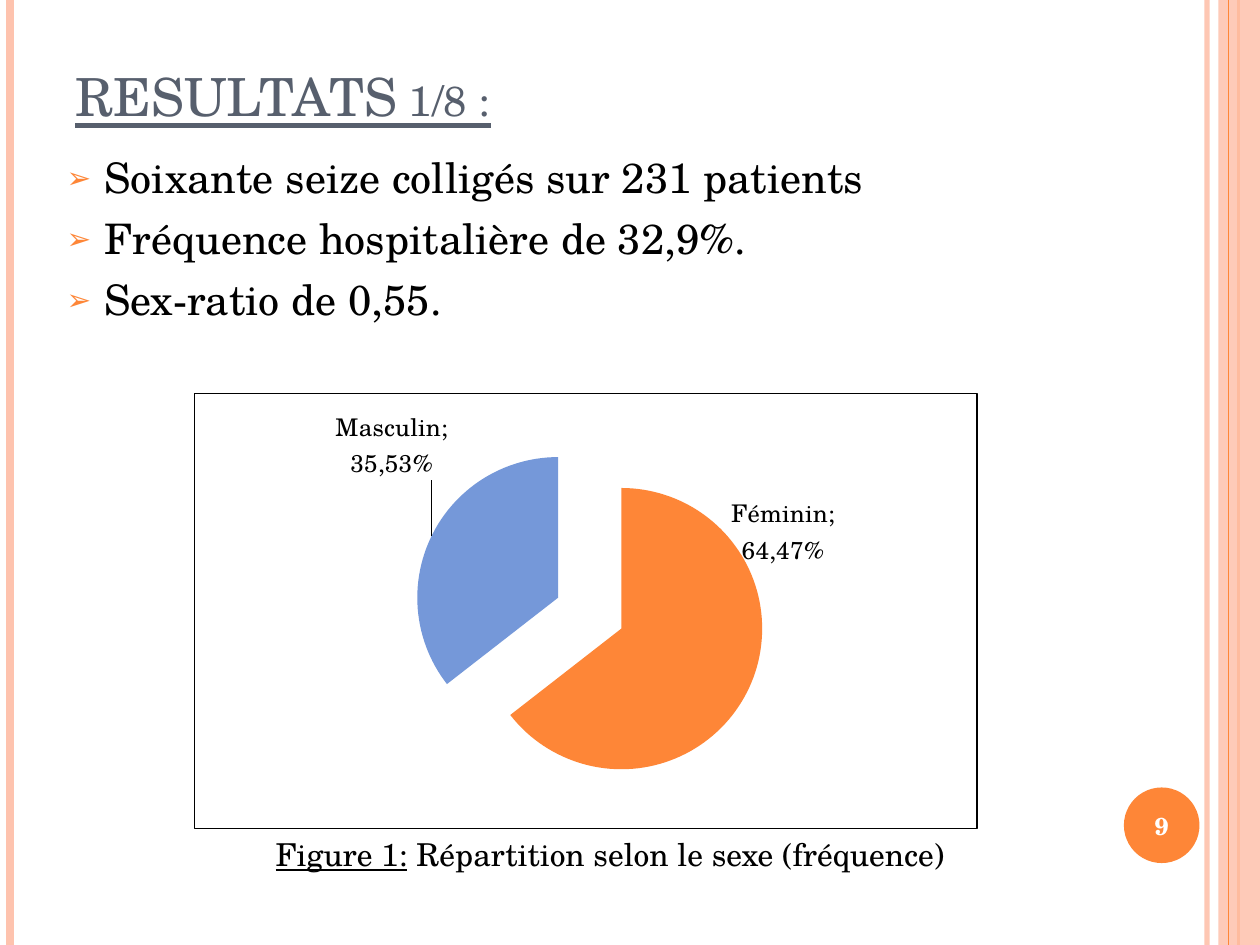
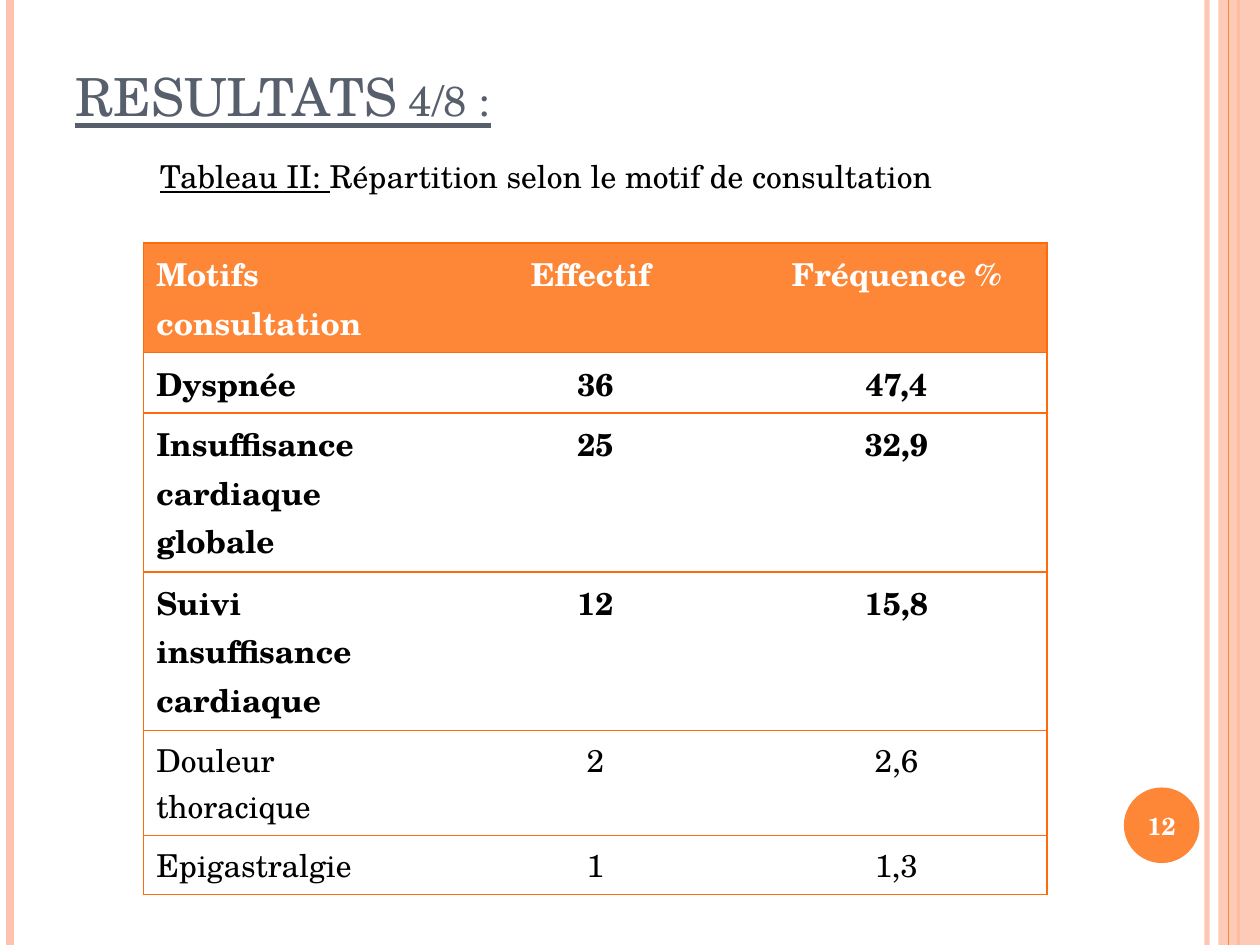
from lxml import etree
from pptx import Presentation
from pptx import util as u
from pptx.chart import data as cd
from pptx.dml.color import RGBColor
from pptx.enum import chart as ch, shapes as sh, text as tx
from pptx.oxml import ns, parse_xml

ORANGE = RGBColor(0xFE, 0x86, 0x37)
EDGE = RGBColor(0xFF, 0x6B, 0x0A)
PEACH = RGBColor(0xFE, 0xC3, 0xAE)
BLUE = RGBColor(0x75, 0x98, 0xD9)
SLATE = RGBColor(0x57, 0x5F, 0x6D)
BLACK = RGBColor(0, 0, 0)
WHITE = RGBColor(0xFF, 0xFF, 0xFF)
FONT = "TeX Gyre Schola"
MID = tx.PP_ALIGN.CENTER


def box(*at):
    return [u.Inches(v) for v in at]


def sub(parent, tag, **attrs):
    return etree.SubElement(parent, ns.qn(tag), attrs)


def fade(shape, pct):
    color = next(shape._element.spPr.iter(ns.qn("a:srgbClr")))
    sub(color, "a:alpha", val=str(pct * 1000))


def style(font, size, color=BLACK, bold=False, under=False):
    font.name = FONT
    font.size = u.Pt(size)
    font.color.rgb = color
    font.bold = bold
    font.underline = under


def write(para, words, size, color=BLACK, bold=False, under=False):
    run = para.add_run()
    run.text = words
    style(run.font, size, color, bold, under)
    return run


def rule(slide, x, width, color):
    line = slide.shapes.add_connector(
        sh.MSO_CONNECTOR.STRAIGHT, *box(x, 0, x, 7.5))
    line.line.color.rgb = color
    line.line.width = u.Pt(width)
    sub(line._element.spPr, "a:effectLst")
    return line


def solid(slide, kind, at, color):
    shape = slide.shapes.add_shape(kind, *box(*at))
    shape.shadow.inherit = False
    shape.fill.solid()
    shape.fill.fore_color.rgb = color
    shape.line.fill.background()
    return shape


def frame(slide, at, wrap=True):
    body = slide.shapes.add_textbox(*box(*at)).text_frame
    body.word_wrap = wrap
    return body


def page(deck, title, number):
    slide = deck.slides.add_slide(deck.slide_layouts[6])
    fade(rule(slide, 9.58, 3, PEACH), 93)
    rule(slide, 0.08, 4.5, PEACH)
    rule(slide, 9.83, 1.5, ORANGE)
    fade(solid(slide, sh.MSO_SHAPE.RECTANGLE, (9.67, 0, 0.33, 7.5), PEACH), 87)
    rule(slide, 9.75, 0.75, ORANGE)

    badge = solid(slide, sh.MSO_SHAPE.OVAL, (8.92, 6.25, 0.6, 0.6), ORANGE)
    body = badge.text_frame
    body.margin_left = body.margin_right = 0
    body.vertical_anchor = tx.MSO_ANCHOR.MIDDLE
    body.paragraphs[0].alignment = MID
    write(body.paragraphs[0], number, 14, WHITE, True)

    head = frame(slide, (0.5, 0.3, 8.17, 0.76))
    head.vertical_anchor = tx.MSO_ANCHOR.BOTTOM
    run = write(head.paragraphs[0], title, 30, SLATE, under=True)
    run.font._element.set("cap", "small")
    return slide


def bullets(slide, at, items):
    body = frame(slide, at)
    for i, item in enumerate(items):
        para = body.add_paragraph() if i else body.paragraphs[0]
        para.line_spacing = u.Pt(29)
        para.space_after = u.Pt(6)
        props = para._p.get_or_add_pPr()
        props.set("marL", str(u.Inches(0.3)))
        props.set("indent", str(u.Inches(-0.3)))
        sub(sub(props, "a:buClr"), "a:srgbClr", val=str(ORANGE))
        sub(props, "a:buSzPct", val="70000")
        sub(props, "a:buFont", typeface=FONT)
        sub(props, "a:buChar", char="➢")
        write(para, item, 24)


def caption(slide, at, label, words):
    body = frame(slide, at, wrap=False)
    body.auto_size = tx.MSO_AUTO_SIZE.SHAPE_TO_FIT_TEXT
    write(body.paragraphs[0], label, 18, under=True)
    write(body.paragraphs[0], words, 18)


def layout(**places):
    node = etree.Element(ns.qn("c:layout"))
    manual = sub(node, "c:manualLayout")
    for tag, val in places.items():
        sub(manual, f"c:{tag}", val=str(val))
    return node


def pie(slide, at, slices):
    data = cd.CategoryChartData()
    data.categories = [s[0] for s in slices]
    data.add_series("Series 1", [s[1] for s in slices])
    chart = slide.shapes.add_chart(
        ch.XL_CHART_TYPE.PIE, *box(*at), data).chart
    chart.has_legend = False
    chart.has_title = False
    style(chart.font, 10)
    chart.plots[0].vary_by_categories = True
    series = chart.plots[0].series[0]
    ser = series._element
    burst = etree.Element(ns.qn("c:explosion"), val="25")
    ser.find(ns.qn("c:tx")).addnext(burst)
    tags = series.data_labels
    tags.show_value = True
    tags.show_category_name = True
    style(tags.font, 14, bold=True)
    for i, (_, _, color, label, x, y) in enumerate(slices):
        point = series.points[i]
        point.format.fill.solid()
        point.format.fill.fore_color.rgb = color
        tag = point.data_label
        write(tag.text_frame.paragraphs[0], label, 14)
        tag.position = ch.XL_LABEL_POSITION.OUTSIDE_END
        node = ser.findall(".//" + ns.qn("c:dLbl"))[i]
        node.find(ns.qn("c:idx")).addnext(layout(x=x, y=y))
        node.find(ns.qn("c:showCatName")).set("val", "1")

    root = chart._chartSpace
    area = root.find(".//" + ns.qn("c:plotArea"))
    old = area.find(ns.qn("c:layout"))
    if old is not None:
        area.remove(old)
    area.insert(0, layout(layoutTarget="inner", xMode="edge", yMode="edge",
                          x=0.28, y=0.1, w=0.45, h=0.81))
    root.find(ns.qn("c:chart")).addnext(parse_xml(
        f'<c:spPr {ns.nsdecls("c", "a")}><a:noFill/><a:ln w="9525">'
        f'<a:solidFill><a:srgbClr val="{BLACK}"/></a:solidFill>'
        '</a:ln></c:spPr>'))


def border(cell, sides):
    props = cell._tc.get_or_add_tcPr()
    for i, side in enumerate("LRTB"):
        line = etree.Element(ns.qn(f"a:ln{side}"), w="12700")
        if side in sides:
            sub(sub(line, "a:solidFill"), "a:srgbClr", val=str(EDGE))
        else:
            sub(line, "a:noFill")
        props.insert(i, line)


def grid(slide, at, heights, rows, strong):
    last = len(rows[0]) - 1
    table = slide.shapes.add_table(
        len(rows), last + 1, *box(*at, sum(heights))).table
    for r, row in enumerate(rows):
        table.rows[r].height = u.Inches(heights[r])
        for c, words in enumerate(row):
            cell = table.cell(r, c)
            if r:
                cell.fill.background()
            else:
                cell.fill.solid()
                cell.fill.fore_color.rgb = ORANGE
            para = cell.text_frame.paragraphs[0]
            if c:
                para.alignment = MID
            write(para, words, 18, BLACK if r else WHITE, r < strong)
            border(cell, "TB" + "L" * (c == 0) + "R" * (c == last))


def main():
    deck = Presentation()
    deck.slide_width, deck.slide_height = box(10, 7.5)

    sexes = page(deck, "RESULTATS 1/8 :", "9")
    bullets(sexes, (0.43, 1.15, 8.17, 1.6), [
        "Soixante seize colligés sur 231 patients",
        "Fréquence hospitalière de 32,9%.",
        "Sex-ratio de 0,55."])
    pie(sexes, (1.54, 3.12, 6.22, 3.46), [
        ("Feminin", 49, ORANGE, "Féminin; 64,47%", -0.03, -0.46),
        ("Masculin", 27, BLUE, "Masculin; 35,53%", 0.03, -0.12)])
    caption(sexes, (2.09, 6.58, 5.57, 0.4),
            "Figure 1:", " Répartition selon le sexe (fréquence)")

    motives = page(deck, "RESULTATS 4/8 :", "12")
    grid(motives, (1.14, 1.93, 7.17),
         [0.87, 0.48, 1.26, 1.26, 0.83, 0.47], [
        ("Motifs consultation", "Effectif ", "Fréquence %"),
        ("Dyspnée", "36", "47,4"),
        ("Insuffisance cardiaque globale", "25", "32,9"),
        ("Suivi insuffisance cardiaque", "12", "15,8"),
        ("Douleur thoracique", "2", "2,6"),
        ("Epigastralgie", "1", "1,3")], strong=4)
    caption(motives, (1.17, 1.2, 6.39, 0.4),
            "Tableau II: ", "Répartition selon le motif de consultation")

    deck.save("out.pptx")


if __name__ == "__main__":
    main()
